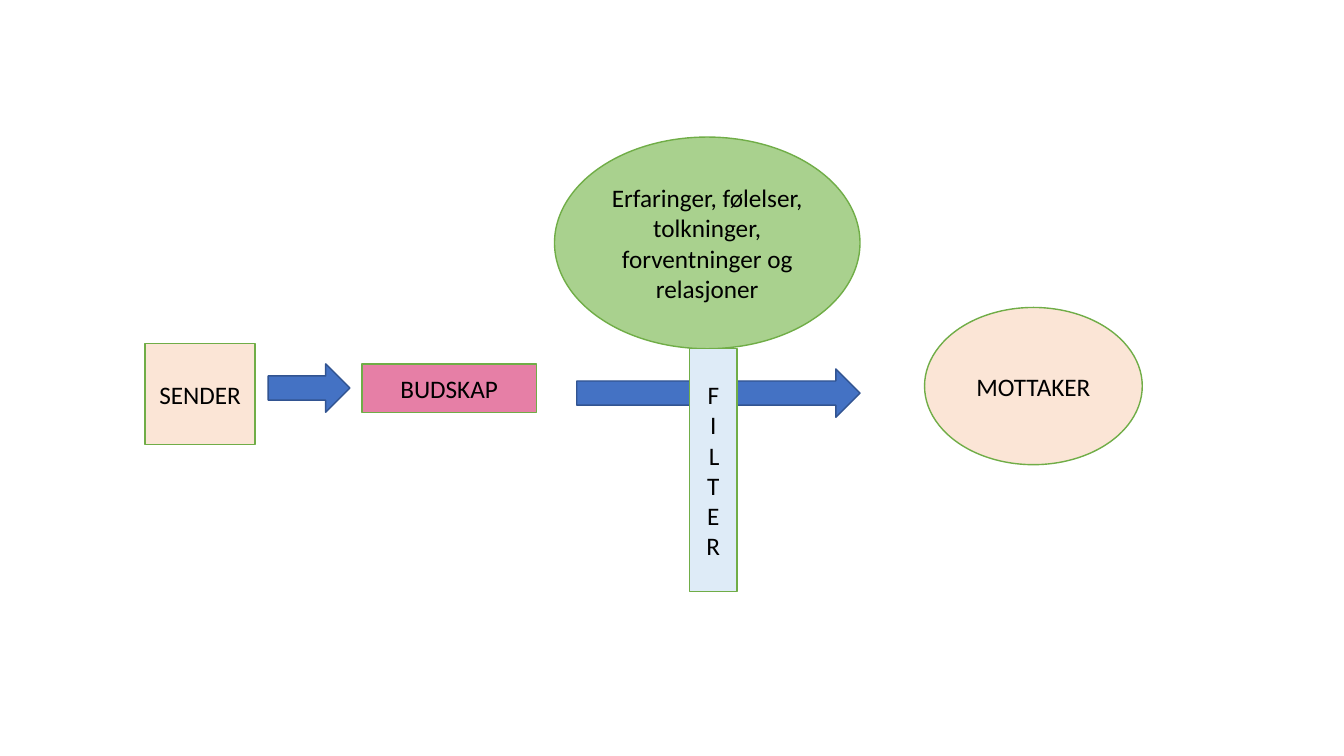
from pptx import Presentation
from pptx.dml.color import RGBColor
from pptx.enum.shapes import MSO_SHAPE
from pptx.enum.text import MSO_ANCHOR, PP_ALIGN
from pptx.util import Inches, Pt

COLORS = {
    "person": "FBE5D6",
    "message": "E67FA6",
    "influence": "A9D18E",
    "filter": "DEEBF7",
    "arrow": "4472C4",
    "arrow_edge": "325491",
    "edge": "70AD47",
    "text": "000000",
}
FONT, TEXT_SIZE, LINE_WIDTH = "Calibri", 18, 1
BOX, OVAL, ARROW = MSO_SHAPE.RECTANGLE, MSO_SHAPE.OVAL, MSO_SHAPE.RIGHT_ARROW

# Left, top, width and height are percentages of the slide's size.
BAND_TOP, BAND_HEIGHT = 48.13, 6.4
INFLUENCE_TOP, INFLUENCE_HEIGHT = 18.13, 28
FILTER_TOP = INFLUENCE_TOP + INFLUENCE_HEIGHT

# Preset, role, text, (left, top, width, height), from back to front
PARTS = [
    (BOX, "person", "SENDER", (10.8, 45.47, 8.18, 13.33)),
    (ARROW, "arrow", "", (19.95, BAND_TOP, 6.08, BAND_HEIGHT)),
    (BOX, "message", "BUDSKAP", (26.93, BAND_TOP, 12.98, BAND_HEIGHT)),
    (ARROW, "arrow", "", (42.91, 48.8, 21.08, BAND_HEIGHT)),
    (OVAL, "person", "MOTTAKER", (68.79, 40.67, 16.2, 20.8)),
    (OVAL, "influence",
     "Erfaringer, følelser, tolkninger, forventninger og relasjoner",
     (41.26, INFLUENCE_TOP, 22.73, INFLUENCE_HEIGHT)),
    (BOX, "filter", "FILTER", (51.31, FILTER_TOP, 3.53, 32.13)),
]


def color(name):
    return RGBColor.from_string(COLORS[name])


def write_label(part, text, stacked):
    """Centre the text in the part, with upright letters in a column if stacked."""
    frame = part.text_frame
    frame.word_wrap = True
    frame.vertical_anchor = MSO_ANCHOR.MIDDLE
    if stacked:
        frame._txBody.bodyPr.set("vert", "wordArtVert")
    paragraph = frame.paragraphs[0]
    paragraph.alignment = PP_ALIGN.CENTER
    run = paragraph.add_run()
    run.text = text
    run.font.name = FONT
    run.font.size = Pt(TEXT_SIZE)
    run.font.color.rgb = color("text")


def add_part(slide, size, preset, role, text, shares):
    box = [round(share / 100 * length) for share, length in zip(shares, size * 2)]
    part = slide.shapes.add_shape(preset, *box)
    part.shadow.inherit = False
    part.fill.solid()
    part.fill.fore_color.rgb = color(role)
    part.line.color.rgb = color("arrow_edge" if role == "arrow" else "edge")
    part.line.width = Pt(LINE_WIDTH)
    if text:
        write_label(part, text, stacked=role == "filter")


def main():
    deck = Presentation()
    size = (Inches(13.33), Inches(7.5))
    deck.slide_width, deck.slide_height = size
    slide = deck.slides.add_slide(deck.slide_layouts.get_by_name("Blank"))
    for part in PARTS:
        add_part(slide, size, *part)
    deck.save("out.pptx")


if __name__ == "__main__":
    main()
